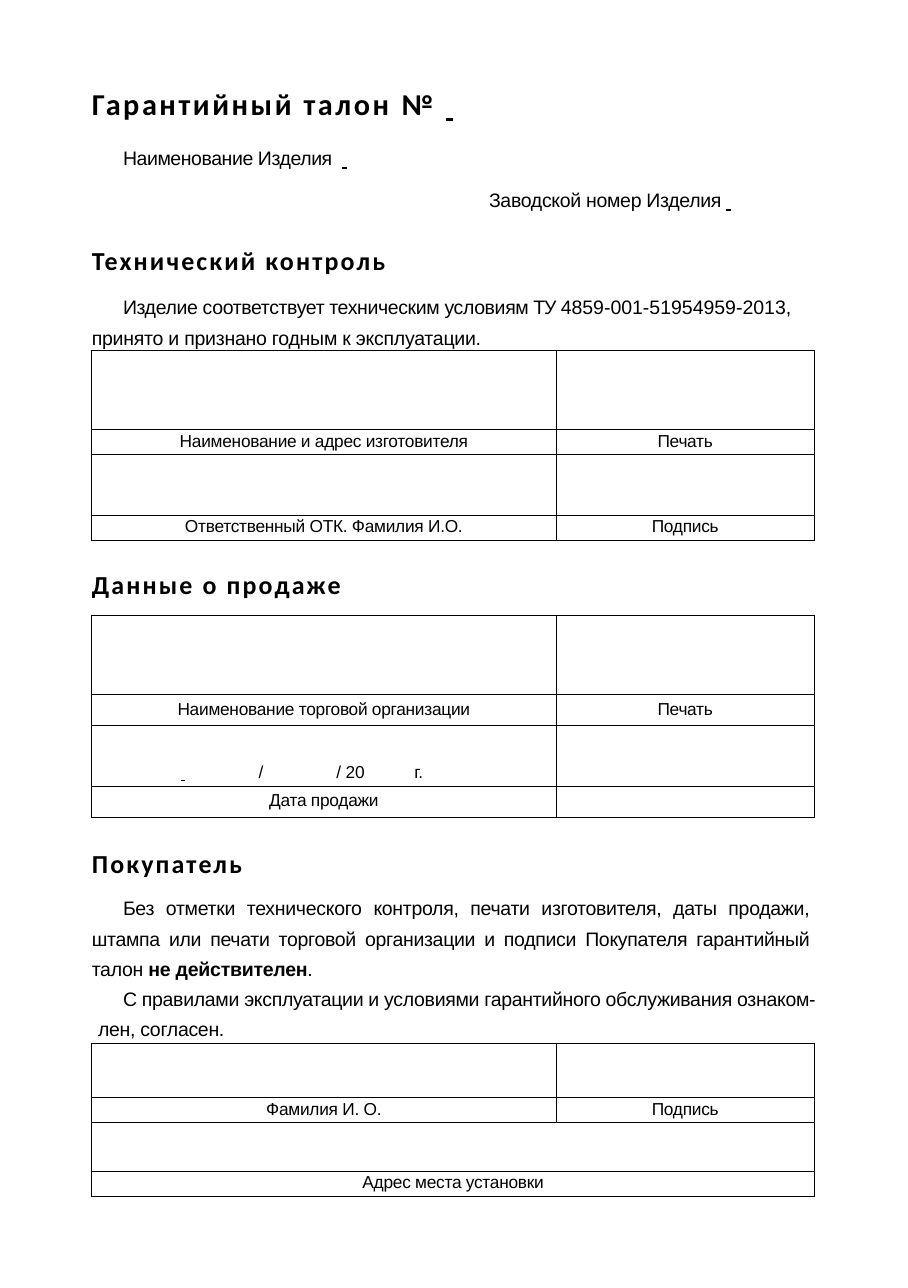
from lxml.etree import SubElement
from pptx import Presentation
from pptx.dml.color import RGBColor
from pptx.enum.text import MSO_ANCHOR, MSO_AUTO_SIZE, PP_ALIGN
from pptx.oxml.ns import qn
from pptx.util import Inches, Pt

BLACK = RGBColor(0, 0, 0)
LEFT = 0.59
WIDTH = 4.64
COLS = (2.98, 1.66)
FIRST = 0.2

HEAD = {"name": "Calibri", "size": Pt(12), "bold": True}
TITLE = {**HEAD, "size": Pt(14)}
BODY = {"name": "Arial", "size": Pt(9), "bold": False}
CELL = {**BODY, "size": Pt(8)}
LINE = {"underline": True}
BOLD = {"bold": True}
FRAME = {
    "margin_left": 0, "margin_top": 0, "margin_right": 0, "margin_bottom": 0,
    "word_wrap": True, "auto_size": MSO_AUTO_SIZE.NONE,
    "vertical_anchor": MSO_ANCHOR.TOP,
}


def put(item, form):
    for key, value in form.items():
        setattr(item, key, value)


class Card:
    def __init__(self, deck):
        self.slide = deck.slides.add_slide(deck.slide_layouts[5])

    def fill(self, para, runs, font, align=PP_ALIGN.LEFT):
        para.alignment = align
        for text, gap, *extra in runs:
            run = para.add_run()
            run.text = text
            put(run.font, font)
            for form in extra:
                put(run.font, form)
            run.font.color.rgb = BLACK
            run._r.get_or_add_rPr().set("spc", str(round(gap * 100)))

    def indent(self, para, left, first):
        props = para._p.get_or_add_pPr()
        props.set("marL", str(Inches(left)))
        props.set("indent", str(Inches(first)))

    def title(self, top, runs):
        shape = self.slide.shapes.title
        put(shape, {"left": Inches(LEFT), "top": Inches(top),
                    "width": Inches(WIDTH), "height": Inches(0.25)})
        put(shape.text_frame, FRAME)
        self.fill(shape.text_frame.paragraphs[0], runs, TITLE)

    def text(self, top, runs, font=BODY, left=LEFT, width=WIDTH, height=0.2,
             align=PP_ALIGN.LEFT, space=1, inset=0, first=0):
        box = self.slide.shapes.add_textbox(
            Inches(left), Inches(top), Inches(width), Inches(height))
        put(box.text_frame, FRAME)
        para = box.text_frame.paragraphs[0]
        para.line_spacing = space
        self.indent(para, inset, first)
        self.fill(para, runs, font, align)

    def head(self, top, text):
        self.text(top, [(text, 1)], HEAD)

    def edge(self, cell):
        props = cell._tc.get_or_add_tcPr()
        for spot, side in enumerate(("lnL", "lnR", "lnT", "lnB")):
            line = props.makeelement(qn("a:" + side), {"w": str(Pt(0.5))})
            props.insert(spot, line)
            solid = SubElement(line, qn("a:solidFill"))
            SubElement(solid, qn("a:srgbClr"), val=str(BLACK))

    def table(self, top, rows, texts, pad=0.01, spans=()):
        table = self.slide.shapes.add_table(
            len(rows), len(COLS), Inches(LEFT), Inches(top),
            Inches(WIDTH), Inches(sum(rows))).table
        put(table, {"first_row": False, "horz_banding": False})
        for col, width in zip(table.columns, COLS):
            col.width = Inches(width)
        for y, high in enumerate(rows):
            table.rows[y].height = Inches(high)
            for x in range(len(COLS)):
                cell = table.cell(y, x)
                put(cell, {"margin_left": 0, "margin_right": 0,
                           "margin_top": Inches(pad), "margin_bottom": 0})
                cell.fill.background()
                self.edge(cell)
                para = cell.text_frame.paragraphs[0]
                if (y, x) in texts:
                    self.fill(para, [(texts[y, x], -0.15)], CELL, PP_ALIGN.CENTER)
                else:
                    SubElement(para._p, qn("a:endParaRPr"), sz="800")
        for y in spans:
            table.cell(y, 0).merge(table.cell(y, 1))
        return table

    def date(self, cell):
        put(cell, {"vertical_anchor": MSO_ANCHOR.BOTTOM, "margin_bottom": Inches(0.03)})
        para = cell.text_frame.paragraphs[0]
        for old in para._p.findall(qn("a:endParaRPr")):
            para._p.remove(old)
        self.indent(para, 0.57, 0)
        tabs = SubElement(para._p.get_or_add_pPr(), qn("a:tabLst"))
        for stop in (0.88, 1.89, 2.37):
            SubElement(tabs, qn("a:tab"), pos=str(Inches(stop)), algn="l")
        self.fill(para, [(" ", 0, LINE), ("\t/\t/ 20\tг.", -0.1)], CELL)


def main():
    deck = Presentation()
    put(deck, {"slide_width": Inches(5.83), "slide_height": Inches(8.27)})
    card = Card(deck)

    card.title(0.55, [("Гарантийный талон ", 1.15), ("№ ", 1.4), (" ", 0.3, LINE)])
    card.text(0.94, [("Наименование Изделия  ", -0.2), (" ", 0, LINE)], left=0.79, width=2)
    card.text(1.21, [("Заводской номер Изделия ", -0.13), (" ", 0, LINE)],
              left=3.14, width=2)

    card.head(1.57, "Технический контроль")
    card.text(1.85, [
        ("Изделие соответствует техническим условиям ", -0.17), ("ТУ ", -0.5),
        ("4859-001-51954959-2013, ", 0),
        ("принято и признано годным к эксплуатации.", -0.1)],
        height=0.38, space=1.3, first=FIRST)
    card.table(2.25, (0.51, 0.16, 0.39, 0.16), {
        (1, 0): "Наименование и адрес изготовителя", (1, 1): "Печать",
        (3, 0): "Ответственный ОТК. Фамилия И.О.", (3, 1): "Подпись"})

    card.head(3.65, "Данные о продаже")
    sale = card.table(3.95, (0.51, 0.2, 0.39, 0.2), {
        (1, 0): "Наименование торговой организации", (1, 1): "Печать",
        (3, 0): "Дата продажи"}, pad=0.03)
    card.date(sale.cell(2, 0))

    card.head(5.44, "Покупатель")
    card.text(5.71, [
        ("Без отметки технического контроля, печати изготовителя, даты продажи, "
         "штампа или печати торговой организации и подписи Покупателя "
         "гарантийный талон ", -0.15),
        ("не действителен", -0.1, BOLD), (".", -0.1)],
        width=4.6, height=0.57, align=PP_ALIGN.JUSTIFY, space=1.3, first=FIRST)
    card.text(6.29, [
        ("С правилами эксплуатации и условиями гарантийного обслуживания "
         "ознаком- лен, согласен.", -0.13)],
        width=4.7, height=0.38, space=1.3, inset=0.04, first=FIRST - 0.04)
    card.table(6.7, (0.35, 0.16, 0.31, 0.16), {
        (1, 0): "Фамилия И. О.", (1, 1): "Подпись",
        (3, 0): "Адрес места установки"}, spans=(2, 3))

    deck.save("out.pptx")


if __name__ == "__main__":
    main()
